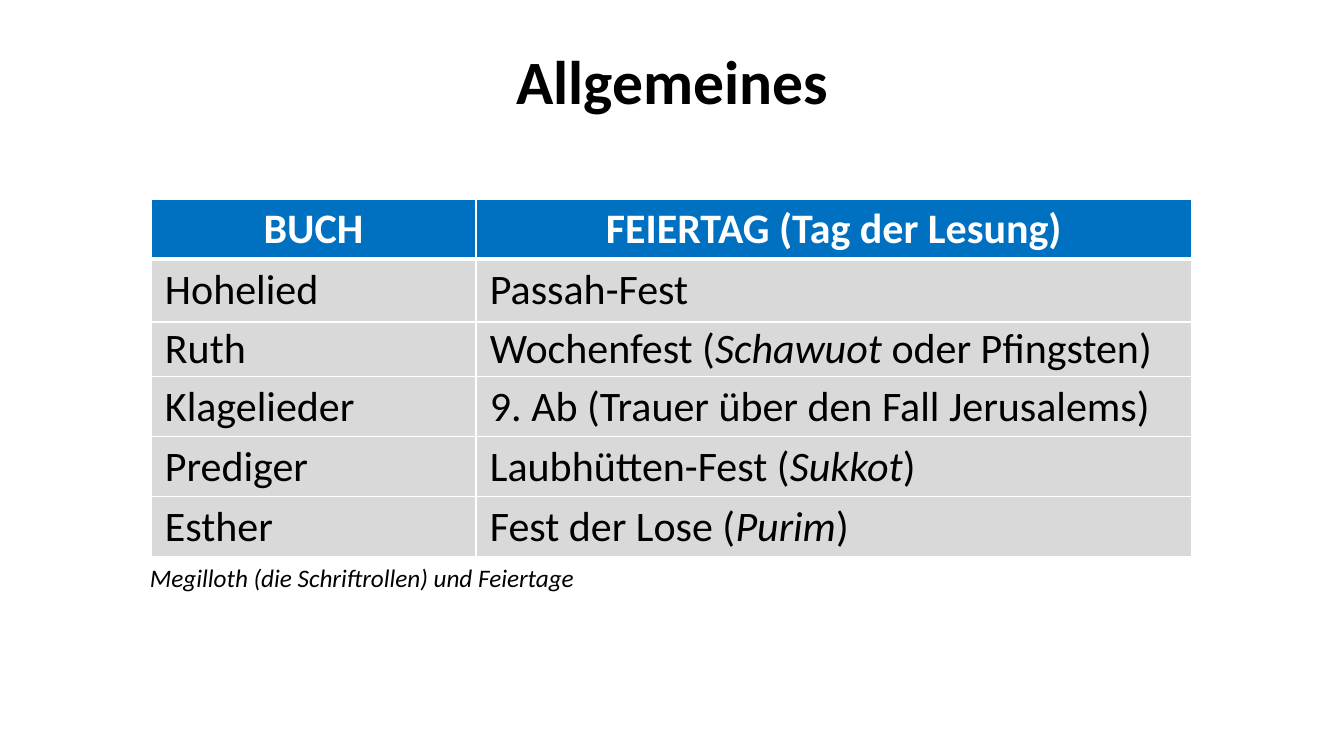
from lxml import etree
from pptx import Presentation
from pptx.dml.color import RGBColor
from pptx.enum.text import MSO_ANCHOR, MSO_AUTO_SIZE, PP_ALIGN
from pptx.oxml.ns import qn
from pptx.util import Emu, Pt

CENTER, LEFT = PP_ALIGN.CENTER, PP_ALIGN.LEFT
TOP, MIDDLE = MSO_ANCHOR.TOP, MSO_ANCHOR.MIDDLE
FIT_SHAPE, NO_FIT = MSO_AUTO_SIZE.SHAPE_TO_FIT_TEXT, MSO_AUTO_SIZE.NONE

WHITE = RGBColor(0xFF, 0xFF, 0xFF)
BLACK = RGBColor(0x00, 0x00, 0x00)
BLUE = RGBColor(0x00, 0x70, 0xC0)
GREY = RGBColor(0xD9, 0xD9, 0xD9)

FONT = "Calibri"
PX_PER_INCH = 100.8

COLUMNS = [325, 716]
ROWS = [60, 63, 55, 60, 60, 60]

# Each cell is a list of runs; every second run is italic
FEASTS = [
    (["BUCH"], ["FEIERTAG (Tag der Lesung)"]),
    (["Hohelied"], ["Passah-Fest"]),
    (["Ruth"], ["Wochenfest (", "Schawuot", " oder Pfingsten)"]),
    (["Klagelieder"], ["9. Ab (Trauer über den Fall Jerusalems)"]),
    (["Prediger"], ["Laubhütten-Fest (", "Sukkot", ")"]),
    (["Esther"], ["Fest der Lose (", "Purim", ")"]),
]


def px(n):
    return Emu(round(n * 914400 / PX_PER_INCH))


def set_attrs(obj, values):
    for name, value in values.items():
        setattr(obj, name, value)


def add_run(p, text, color, **font):
    r = p.add_run()
    r.text = text
    set_attrs(r.font, {"name": FONT, **font})
    r.font.color.rgb = color


def add_text(slide, box, text, frame, align, spacing=None, **font):
    tf = slide.shapes.add_textbox(*map(px, box)).text_frame
    set_attrs(tf, frame)
    p = tf.paragraphs[0]
    set_attrs(p, {"alignment": align, "line_spacing": spacing})
    add_run(p, text, BLACK, **font)


def set_borders(cell, widths):
    tc_pr = cell._tc.get_or_add_tcPr()
    for i, (side, width) in enumerate(widths.items()):
        ln = etree.Element(qn(f"a:ln{side}"), w=str(Pt(width)))
        fill = etree.SubElement(ln, qn("a:solidFill"))
        etree.SubElement(fill, qn("a:srgbClr"), val=str(WHITE))
        tc_pr.insert(i, ln)


def fill_cell(cell, runs, row):
    header = row == 0
    set_attrs(cell, {"vertical_anchor": MIDDLE,
                     "margin_left": px(14), "margin_right": px(14),
                     "margin_top": 0, "margin_bottom": 0})
    cell.fill.solid()
    cell.fill.fore_color.rgb = BLUE if header else GREY
    set_borders(cell, {"L": 1, "R": 1,
                       "T": 3 if row == 1 else 1, "B": 3 if header else 1})
    p = cell.text_frame.paragraphs[0]
    p.alignment = CENTER if header else LEFT
    for i, text in enumerate(runs):
        add_run(p, text, WHITE if header else BLACK,
                size=Pt(30), bold=header, italic=i % 2 == 1)


def add_feast_table(slide, left, top):
    box = (left, top, sum(COLUMNS), sum(ROWS))
    table = slide.shapes.add_table(len(ROWS), len(COLUMNS), *map(px, box)).table
    set_attrs(table, {"first_row": True, "horz_banding": False})
    for column, width in zip(table.columns, COLUMNS):
        column.width = px(width)
    for i, (row, height) in enumerate(zip(table.rows, ROWS)):
        row.height = px(height)
        for cell, runs in zip(row.cells, FEASTS[i]):
            fill_cell(cell, runs, i)


def main():
    prs = Presentation()
    prs.slide_width, prs.slide_height = px(1344), px(756)
    slide = prs.slides.add_slide(prs.slide_layouts[6])

    # Books and their feast days
    add_feast_table(slide, 151, 199)

    # Table caption
    add_text(slide, (140, 557, 454, 40),
             "Megilloth (die Schriftrollen) und Feiertage",
             {"word_wrap": False, "auto_size": FIT_SHAPE,
              "vertical_anchor": TOP},
             LEFT, size=Pt(18), italic=True)

    # Title
    add_text(slide, (93, 40, 1159, 90), "Allgemeines",
             {"word_wrap": True, "auto_size": NO_FIT,
              "vertical_anchor": MIDDLE},
             CENTER, spacing=0.9, size=Pt(44), bold=True)

    prs.save("out.pptx")


if __name__ == "__main__":
    main()
